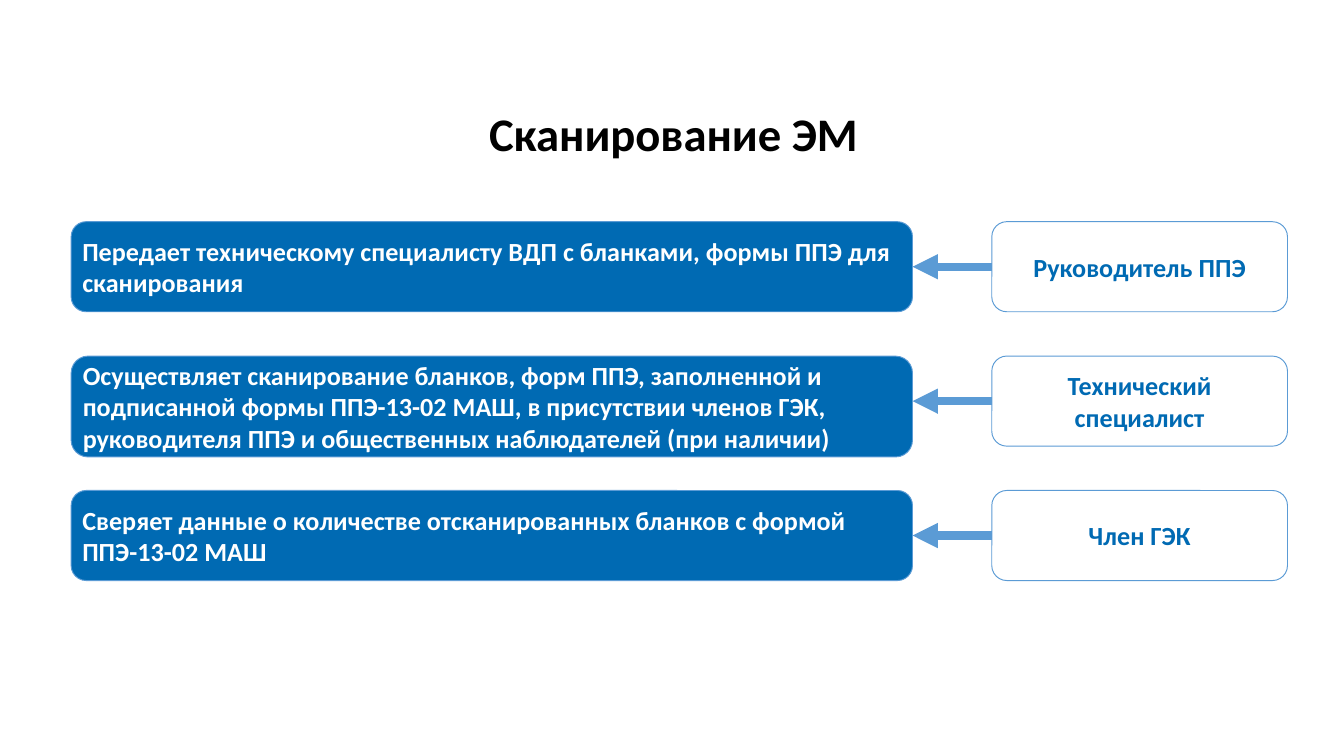
from dataclasses import dataclass

from lxml import etree
from pptx import Presentation
from pptx.dml.color import RGBColor
from pptx.enum import shapes, text
from pptx.oxml import ns
from pptx.util import Inches, Pt


@dataclass(frozen=True)
class Theme:
    font: str = "Calibri"
    black: RGBColor = RGBColor(0, 0, 0)
    white: RGBColor = RGBColor(255, 255, 255)
    blue: RGBColor = RGBColor(0x00, 0x6A, 0xB3)
    edge: RGBColor = RGBColor(0x5B, 0x9B, 0xD5)
    head: int = 25
    body: int = 14
    thin: float = 0.5
    thick: float = 4.5


THEME = Theme()
PAGE_W = 10
PAGE_H = PAGE_W * 9 / 16
LEFT, TOP, WIDTH = 0.53, 1.65, 9.05
PITCH, HIGH = 1, 0.67
TASK_W, ROLE_W = 6.26, 2.2

# role, task, task box height
STEPS = [
    ("Руководитель ППЭ",
     "Передает техническому специалисту ВДП с бланками, формы ППЭ для сканирования",
     HIGH),
    ("Технический специалист",
     "Осуществляет сканирование бланков, форм ППЭ, заполненной и подписанной формы "
     "ППЭ-13-02 МАШ, в присутствии членов ГЭК, руководителя ППЭ и общественных "
     "наблюдателей (при наличии)",
     0.75),
    ("Член ГЭК",
     "Сверяет данные о количестве отсканированных бланков с формой ППЭ-13-02 МАШ",
     HIGH),
]


def write(shape, words, size, color, align, pad):
    """Fill the shape with one bold paragraph; pad is (side, top) in inches."""
    frame = shape.text_frame
    frame.word_wrap = True
    frame.vertical_anchor = text.MSO_ANCHOR.MIDDLE
    frame.margin_left = frame.margin_right = Inches(pad[0])
    frame.margin_top = frame.margin_bottom = Inches(pad[1])
    para = frame.paragraphs[0]
    para.text = words
    para.alignment = align
    font = para.font
    font.name, font.size, font.bold = THEME.font, Pt(size), True
    font.color.rgb = color
    return para


def add_title(slide, words, x, y, w, h):
    box = slide.shapes.add_textbox(Inches(x), Inches(y), Inches(w), Inches(h))
    para = write(box, words, THEME.head, THEME.black,
                 text.PP_ALIGN.CENTER, (0.07, 0.04))
    para.line_spacing = 0.9


def add_card(slide, words, x, y, w, h, fill, color, align):
    card = slide.shapes.add_shape(shapes.MSO_SHAPE.ROUNDED_RECTANGLE,
                                  Inches(x), Inches(y), Inches(w), Inches(h))
    card.shadow.inherit = False
    card.fill.solid()
    card.fill.fore_color.rgb = fill
    card.line.color.rgb = THEME.edge
    card.line.width = Pt(THEME.thin)
    write(card, words, THEME.body, color, align, (0.05, 0.03))
    return card


def add_arrow(slide, role, task):
    """Level arrow from the role's left side to the task's right side."""
    mid = role.top + role.height // 2
    arrow = slide.shapes.add_connector(shapes.MSO_CONNECTOR.STRAIGHT,
                                       role.left, mid,
                                       task.left + task.width, mid)
    arrow.begin_connect(role, 1)
    if task.height == role.height:
        arrow.end_connect(task, 3)
    arrow.line.color.rgb = THEME.edge
    arrow.line.width = Pt(THEME.thick)
    line = arrow.line._get_or_add_ln()
    etree.SubElement(line, ns.qn("a:tailEnd"), type="triangle")
    etree.SubElement(arrow._element.spPr, ns.qn("a:effectLst"))


def add_step(slide, role, task, x, y, w, high):
    left = add_card(slide, task, x, y, TASK_W, high,
                    THEME.blue, THEME.white, text.PP_ALIGN.LEFT)
    right = add_card(slide, role, x + w - ROLE_W, y, ROLE_W, HIGH,
                     THEME.white, THEME.blue, text.PP_ALIGN.CENTER)
    add_arrow(slide, right, left)


def main():
    deck = Presentation()
    deck.slide_width, deck.slide_height = Inches(PAGE_W), Inches(PAGE_H)
    slide = deck.slides.add_slide(deck.slide_layouts[6])
    add_title(slide, "Сканирование ЭМ", 0.7, 0.47, 8.62, 1.09)
    for row, (role, task, high) in enumerate(STEPS):
        add_step(slide, role, task, LEFT, TOP + row * PITCH, WIDTH, high)
    deck.save("out.pptx")


if __name__ == "__main__":
    main()
